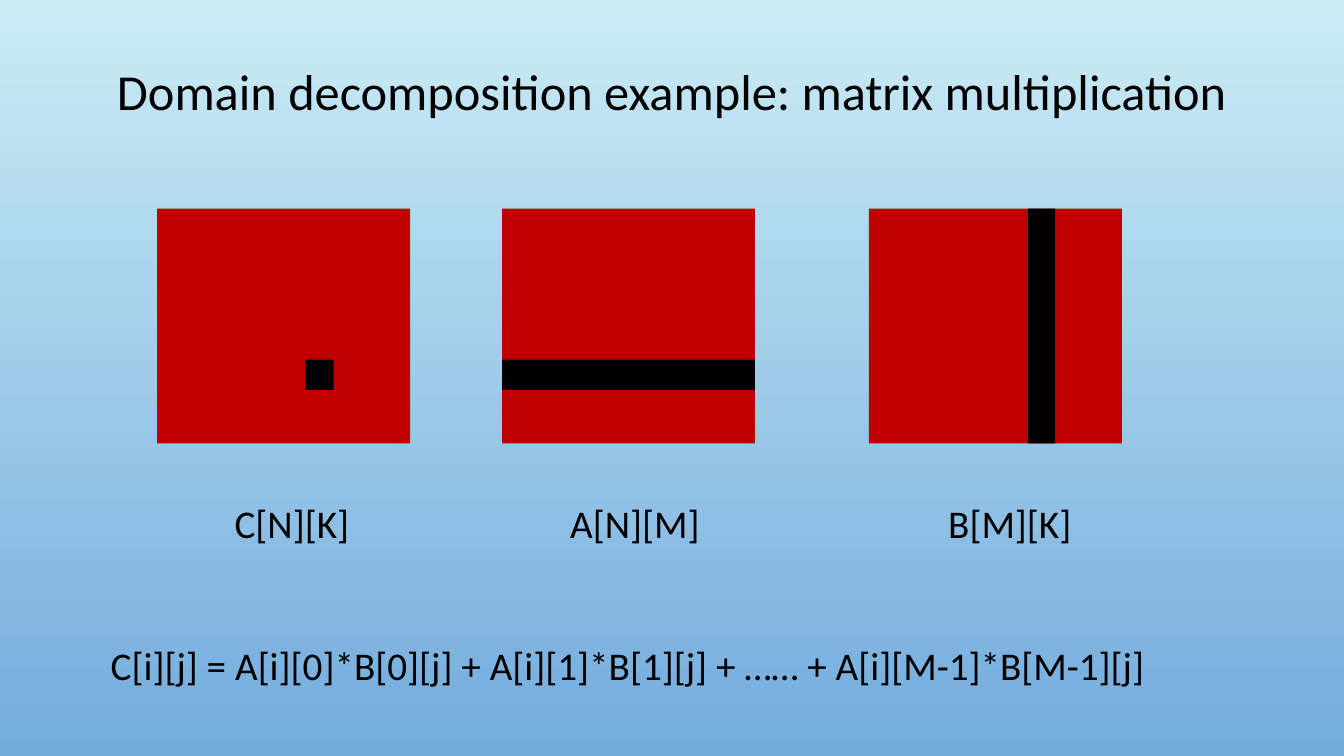
from lxml import etree
from pptx import Presentation
from pptx.dml.color import RGBColor
from pptx.enum.shapes import MSO_SHAPE
from pptx.enum.text import MSO_ANCHOR, PP_ALIGN
from pptx.oxml.ns import qn
from pptx.util import Pt

RECTANGLE = MSO_SHAPE.RECTANGLE
MIDDLE, TOP = MSO_ANCHOR.MIDDLE, MSO_ANCHOR.TOP
CENTER, LEFT = PP_ALIGN.CENTER, PP_ALIGN.LEFT

COLORS = {"sky": "CBECF5", "blue": "73ABDD", "matrix": "C00000", "black": "000000"}
FONT = "Calibri"
TITLE = "Domain decomposition example: matrix multiplication"
FORMULA = "C[i][j] = A[i][0]*B[0][j] + A[i][1]*B[1][j] + …… + A[i][M-1]*B[M-1][j]"

# Label, matrix left, label centre, and the marked part as (x, y, width, height)
# within the matrix, all in points
MATRIX_TOP, MATRIX_WIDTH, MATRIX_HEIGHT = 149, 180.7, 167.8
ROW_Y, ROW_HEIGHT = 108, 21.6
MATRICES = [
    ("C[N][K]", 112.3, 208.6, (105.8, ROW_Y, 20.2, ROW_HEIGHT)),
    ("A[N][M]", 358.6, 453.6, (0, ROW_Y, MATRIX_WIDTH, ROW_HEIGHT)),
    ("B[M][K]", 620.6, 721.4, (113.8, 0, 19.4, MATRIX_HEIGHT)),
]
TEXT_LEFT, TEXT_WIDTH, INSET = 72, 816, 7.2


def color(name):
    return RGBColor.from_string(COLORS[name])


def add_block(left, top, width, height, fill):
    block = slide.shapes.add_shape(RECTANGLE, Pt(left), Pt(top), Pt(width), Pt(height))
    block.shadow.inherit = False
    block.fill.solid()
    block.fill.fore_color.rgb = color(fill)
    block.line.fill.background()


def add_text(top, height, text, size, anchor, align, spacing):
    box = slide.shapes.add_textbox(Pt(TEXT_LEFT), Pt(top), Pt(TEXT_WIDTH), Pt(height))
    frame = box.text_frame
    frame.word_wrap = True
    frame.vertical_anchor = anchor
    frame.text = text
    for paragraph in frame.paragraphs:
        paragraph.alignment = align
        paragraph.line_spacing = spacing
        for run in paragraph.runs:
            run.font.name = FONT
            run.font.size = Pt(size)
            run.font.color.rgb = color("black")
    return frame.paragraphs


def add_center_tabs(paragraph, centers):
    """Add a centred tab stop at each slide position."""
    tabs = etree.SubElement(paragraph._p.get_or_add_pPr(), qn("a:tabLst"))
    for center in centers:
        position = Pt(center - TEXT_LEFT - INSET)
        etree.SubElement(tabs, qn("a:tab"), pos=str(int(position)), algn="ctr")


prs = Presentation()
prs.slide_width, prs.slide_height = Pt(960), Pt(540)
slide = prs.slides.add_slide(prs.slide_layouts[6])

background = slide.background.fill
background.gradient()
background.gradient_angle = 270
for stop, name, position in zip(background.gradient_stops, ("sky", "blue"), (0, 1)):
    stop.color.rgb = color(name)
    stop.position = position

add_text(23, 88.6, TITLE, 36, MIDDLE, CENTER, 0.9)

labels = "".join("\t" + label for label, *_ in MATRICES)
label_line, formula_line = add_text(346.3, 164.2, labels + "\n" + FORMULA, 28, TOP, LEFT, 1.2)
add_center_tabs(label_line, [center for _, _, center, _ in MATRICES])
formula_line.space_before = Pt(61)

for _, left, _, (x, y, width, height) in MATRICES:
    add_block(left, MATRIX_TOP, MATRIX_WIDTH, MATRIX_HEIGHT, "matrix")
    add_block(left + x, MATRIX_TOP + y, width, height, "black")

prs.save("out.pptx")
